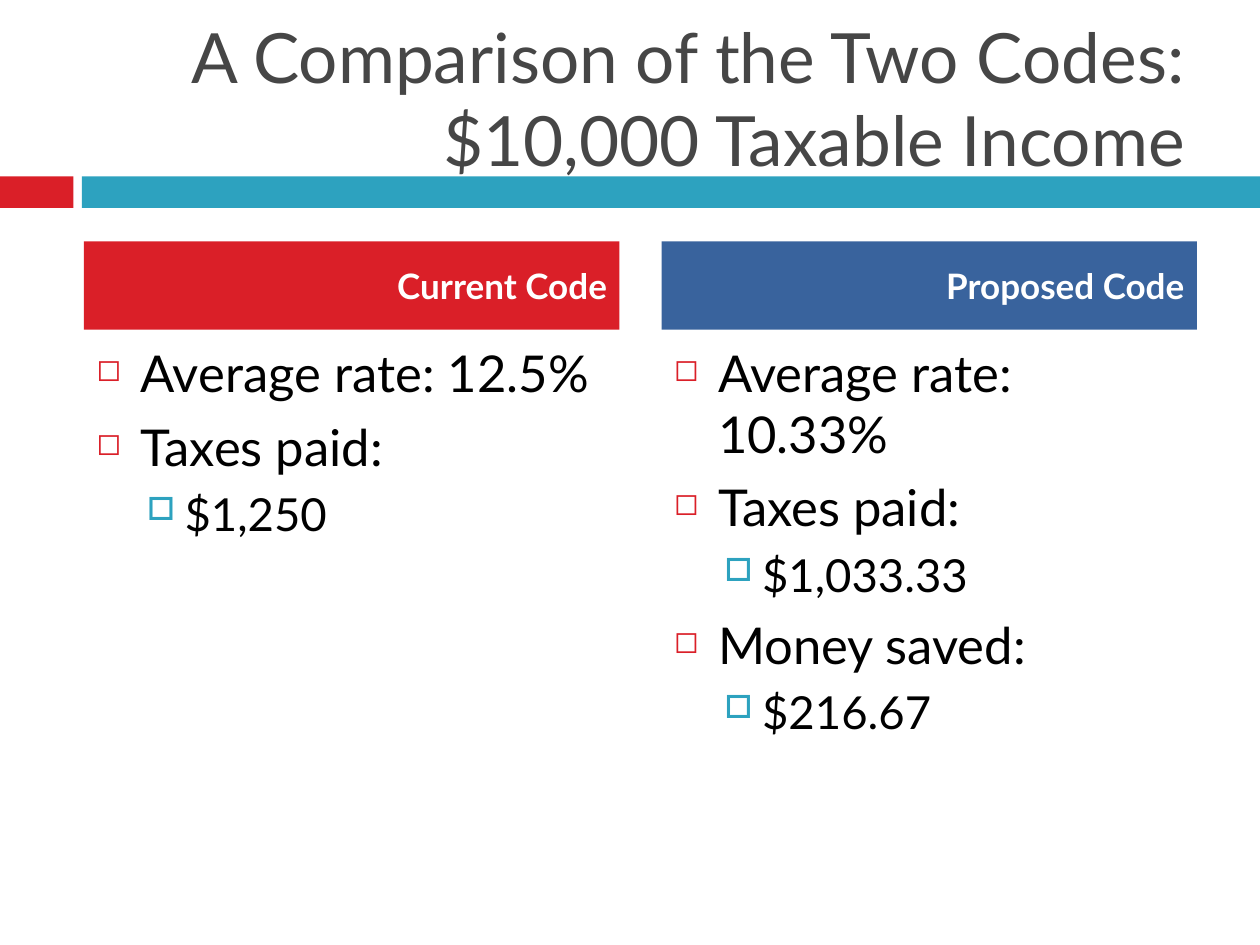
"""Build a slide that compares two tax codes at one income."""
import dataclasses
import typing

import lxml.etree
import pptx
import pptx.dml.color
import pptx.enum.shapes
import pptx.enum.text
import pptx.oxml.ns
import pptx.util

UNIT = pptx.util.Inches(1 / 12)
RED, TEAL, BLUE = "DA1F28", "2DA2BF", "39639D"
MIDDLE = pptx.enum.text.MSO_ANCHOR.MIDDLE
RIGHT = pptx.enum.text.PP_ALIGN.RIGHT


@dataclasses.dataclass(frozen=True)
class Area:
    column: float
    row: float
    columns: float
    rows: float

    def lengths(self) -> list[int]:
        """Turn grid units into slide lengths."""
        return [round(value * UNIT) for value in dataclasses.astuple(self)]


@dataclasses.dataclass(frozen=True)
class Level:
    size: float
    before: float
    margin: float
    hanging: float
    symbol: str
    symbol_color: str
    symbol_percent: int


@dataclasses.dataclass(frozen=True)
class TaxCode:
    name: str
    color: str
    column: float
    points: tuple[tuple[int, str], ...]


LEVELS = (
    Level(29, 7, 0.35, 0.35, "◻", RED, 60),
    Level(26, 5.5, 0.7, 0.3, "□", TEAL, 70),
)
CODES = (
    TaxCode("Current Code", RED, 8, (
        (0, "Average rate: 12.5%"), (0, "Taxes paid:"), (1, "$1,250"))),
    TaxCode("Proposed Code", BLUE, 63, (
        (0, "Average rate: 10.33%"), (0, "Taxes paid:"), (1, "$1,033.33"),
        (0, "Money saved:"), (1, "$216.67"))),
)
BANDS = ((Area(0, 16.8, 7, 3), RED), (Area(7.8, 16.8, 112.2, 3), TEAL))


def color(value: str) -> pptx.dml.color.RGBColor:
    """Read a hex colour."""
    return pptx.dml.color.RGBColor.from_string(value)


def apply(target: typing.Any, values: dict[str, typing.Any]) -> None:
    """Set every format value on the target."""
    for name, value in values.items():
        setattr(target, name, value)


def write(para: typing.Any, text: str, size: float, ink: str, **values: typing.Any) -> None:
    """Write one styled span and format its paragraph."""
    span = para.add_run()
    span.text = text
    apply(span.font, {"name": "Lato", "size": pptx.util.Pt(size),
                      "bold": values.pop("bold", False)})
    span.font.color.rgb = color(ink)
    apply(para, values)


def add_block(page: typing.Any, area: Area, fill: str) -> typing.Any:
    """Draw a plain filled rectangle."""
    box = page.shapes.add_shape(pptx.enum.shapes.MSO_SHAPE.RECTANGLE, *area.lengths())
    box.shadow.inherit = False
    box.fill.solid()
    box.fill.fore_color.rgb = color(fill)
    box.line.fill.background()
    return box


def add_text(page: typing.Any, area: Area) -> typing.Any:
    """Add a wrapping text box and return its frame."""
    frame = page.shapes.add_textbox(*area.lengths()).text_frame
    frame.word_wrap = True
    return frame


def add_bullet(para: typing.Any, level: Level) -> None:
    """Give a paragraph its hanging indent and bullet."""
    properties = para._p.get_or_add_pPr()
    properties.set("marL", str(pptx.util.Inches(level.margin)))
    properties.set("indent", str(-pptx.util.Inches(level.hanging)))
    qn = pptx.oxml.ns.qn
    tint = lxml.etree.SubElement(properties, qn("a:buClr"))
    lxml.etree.SubElement(tint, qn("a:srgbClr"), val=level.symbol_color)
    lxml.etree.SubElement(properties, qn("a:buSzPct"), val=str(level.symbol_percent * 1000))
    lxml.etree.SubElement(properties, qn("a:buChar"), char=level.symbol)


def add_code(page: typing.Any, code: TaxCode) -> None:
    """Draw one tax code's heading and its points."""
    frame = add_text(page, Area(code.column, 32, 51, 47))
    for index, (depth, text) in enumerate(code.points):
        para = frame.add_paragraph() if index else frame.paragraphs[0]
        level = LEVELS[depth]
        write(para, text, level.size, "000000", level=depth,
              space_before=pptx.util.Pt(level.before))
        add_bullet(para, level)
    heading = add_block(page, Area(code.column, 23, 51, 8.4), code.color).text_frame
    apply(heading, {"word_wrap": True, "vertical_anchor": MIDDLE})
    write(heading.paragraphs[0], code.name, 20, "FFFFFF", bold=True,
          alignment=RIGHT, space_before=pptx.util.Pt(7))


def main() -> None:
    """Build and save the deck."""
    deck = pptx.Presentation()
    apply(deck, {"slide_width": 120 * UNIT, "slide_height": 90 * UNIT})
    page = deck.slides.add_slide(deck.slide_layouts[6])
    for area, fill in BANDS:
        add_block(page, area, fill)
    title = add_text(page, Area(7, 3.6, 107, 11.4))
    title.vertical_anchor = MIDDLE
    write(title.paragraphs[0], "A Comparison of the Two Codes: $10,000 Taxable Income",
          39.6, "464646", alignment=RIGHT)
    for code in CODES:
        add_code(page, code)
    deck.save("out.pptx")


if __name__ == "__main__":
    main()
